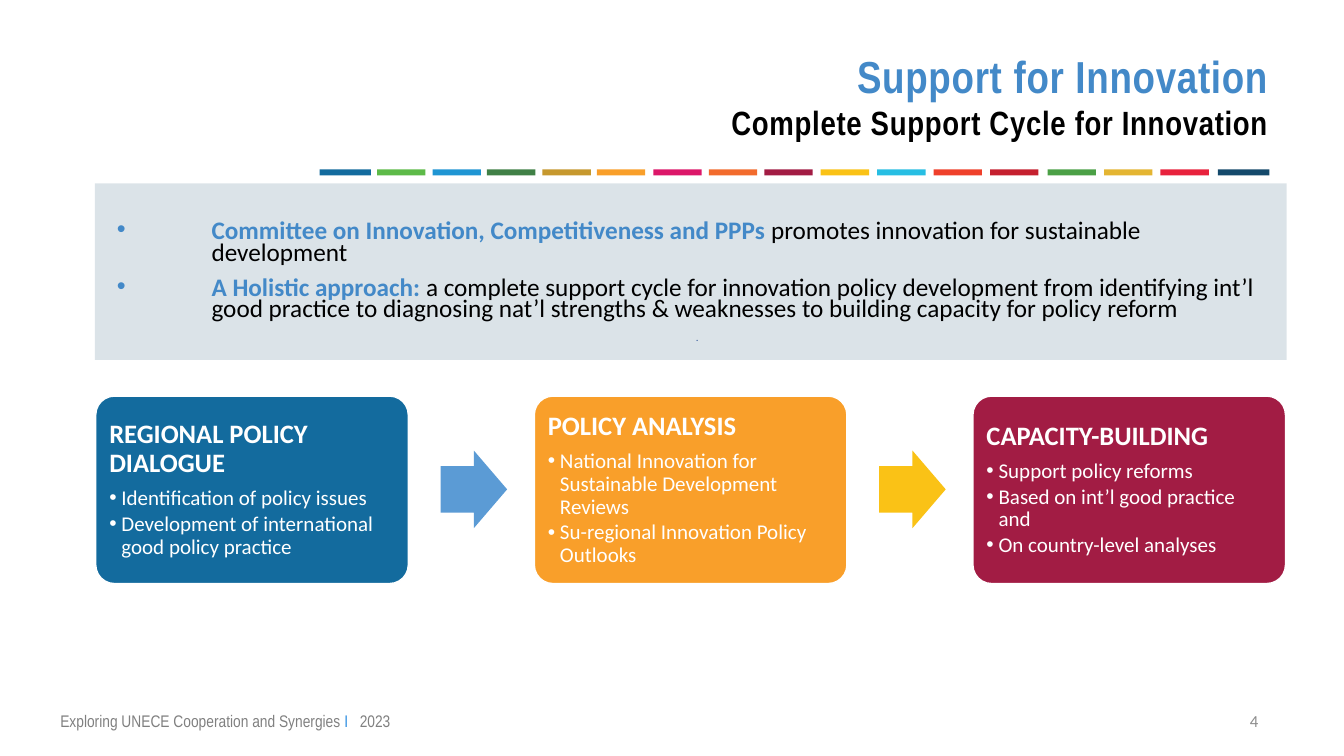
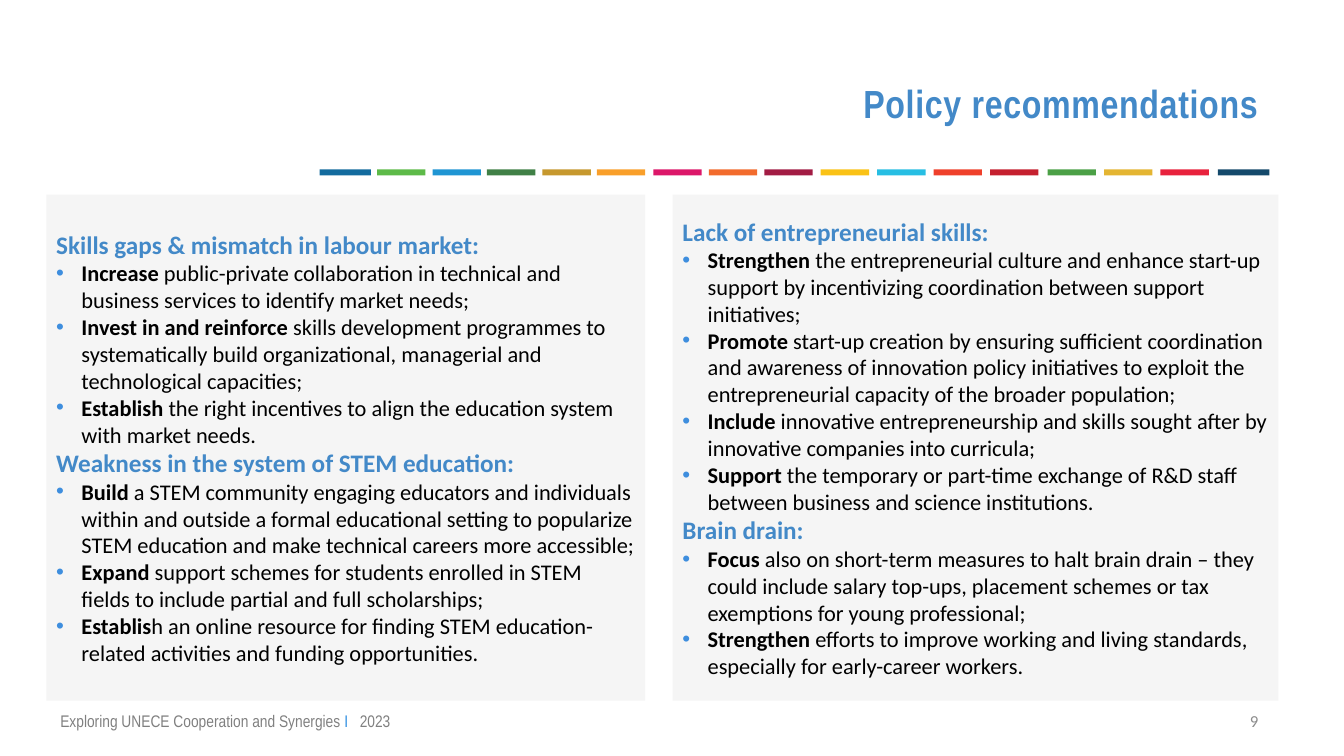
from lxml import etree
from pptx import Presentation
from pptx.dml.color import RGBColor
from pptx.enum.shapes import MSO_SHAPE
from pptx.enum.text import MSO_ANCHOR, PP_ALIGN
from pptx.oxml.ns import qn
from pptx.util import Inches, Pt

RECT = MSO_SHAPE.RECTANGLE
ROUND = MSO_SHAPE.ROUNDED_RECTANGLE
ARROW = MSO_SHAPE.RIGHT_ARROW
TOP, MIDDLE = MSO_ANCHOR.TOP, MSO_ANCHOR.MIDDLE
LEFT, CENTER, RIGHT = PP_ALIGN.LEFT, PP_ALIGN.CENTER, PP_ALIGN.RIGHT

BODY, HEAD = "Calibri", "Arial Narrow"
BLUE, BLACK, WHITE, GREY = "4389C8", "000000", "FFFFFF", "808080"
NAVY, OCEAN, AMBER, WINE, GOLD = "14496B", "136B9E", "F99F2A", "A21C44", "FAC216"

DASHES = [
    (3.17, OCEAN), (3.74, "5DBA48"), (4.29, "1F95D3"), (4.83, "408046"),
    (5.38, "C6982E"), (5.92, AMBER), (6.48, "DC1769"), (7.03, "F26B2D"),
    (7.58, WINE), (8.14, GOLD), (8.7, "27BEE3"), (9.26, "EF402B"),
    (9.82, "C5202F"), (10.39, "4BA046"), (10.95, "E4B532"),
    (11.51, "E8223D"), (12.08, NAVY),
]

CARDS = [
    (OCEAN, "REGIONAL POLICY DIALOGUE",
     ["Identification of policy issues",
      "Development of international good policy practice"]),
    (AMBER, "POLICY ANALYSIS",
     ["National Innovation for Sustainable Development Reviews",
      "Su-regional Innovation Policy Outlooks"]),
    (WINE, "CAPACITY-BUILDING",
     ["Support policy reforms",
      "Based on int’l good practice and",
      "On country-level analyses"]),
]

AIMS = [
    ("Committee on Innovation, Competitiveness and PPPs ",
     "promotes innovation for sustainable development"),
    ("A Holistic approach: ",
     "a complete support cycle for innovation policy development from identifying "
     "int’l good practice to diagnosing nat’l strengths & weaknesses to building "
     "capacity for policy reform"),
]

SKILLS = [
    ("Skills gaps & mismatch in labour market:", [
        ("Increase ", "public-private collaboration in technical and business "
         "services to identify market needs;"),
        ("Invest in and reinforce ", "skills development programmes to "
         "systematically build organizational, managerial and technological "
         "capacities;"),
        ("Establish", " the right incentives to align the education system with "
         "market needs."),
    ]),
    ("Weakness in the system of STEM education:", [
        ("Build", " a STEM community engaging educators and individuals within and "
         "outside a formal educational setting to popularize STEM education and "
         "make technical careers more accessible;"),
        ("Expand", " support schemes for students enrolled in STEM fields to "
         "include partial and full scholarships;"),
        ("Establis", "h an online resource for finding STEM education-related "
         "activities and funding opportunities."),
    ]),
]

TALENT = [
    ("Lack of entrepreneurial skills:", [
        ("Strengthen", " the entrepreneurial culture and enhance start-up support "
         "by incentivizing coordination between support initiatives;"),
        ("Promote", " start-up creation by ensuring sufficient coordination and "
         "awareness of innovation policy initiatives to exploit the "
         "entrepreneurial capacity of the broader population;"),
        ("Include", " innovative entrepreneurship and skills sought after by "
         "innovative companies into curricula;"),
        ("Support", " the temporary or part-time exchange of R&D staff between "
         "business and science institutions."),
    ]),
    ("Brain drain:", [
        ("Focus", " also on short-term measures to halt brain drain – they could "
         "include salary top-ups, placement schemes or tax exemptions for young "
         "professional;"),
        ("Strengthen", " efforts to improve working and living standards, "
         "especially for early-career workers."),
    ]),
]


def color(code):
    return RGBColor.from_string(code)


def node(parent, tag, **attrs):
    """Append a DrawingML child element."""
    return etree.SubElement(parent, qn("a:" + tag), attrs)


class Deck:
    def __init__(self):
        self.file = Presentation()
        self.file.slide_width = Inches(13.33)
        self.file.slide_height = Inches(7.5)
        self.slide = None

    def page(self, number):
        """Start a slide with the shared footer, number and colour band."""
        self.slide = self.file.slides.add_slide(self.file.slide_layouts[6])
        foot = self.text(0.5, 7, 10.44, 0.3)
        self.para(foot, [("Exploring UNECE Cooperation and Synergies ", {}),
                         ("I\t", {"ink": "3290E2"}), ("2023", {})],
                  12, GREY, font=HEAD, tab=2.97)
        mark = self.text(11.63, 6.95, 0.95, 0.4, MIDDLE)
        self.para(mark, number, 12, "8C8C8C", align=RIGHT)
        for left, fill in DASHES:
            wide = 0.51 if fill in (OCEAN, NAVY) else 0.48
            self.shape(RECT, left, 1.68, wide, 0.06, fill)

    def text(self, left, top, wide, high, anchor=TOP):
        box = self.slide.shapes.add_textbox(
            Inches(left), Inches(top), Inches(wide), Inches(high))
        frame = box.text_frame
        frame.word_wrap = True
        frame.vertical_anchor = anchor
        return frame

    def shape(self, kind, left, top, wide, high, fill, alpha=None, line=None):
        item = self.slide.shapes.add_shape(
            kind, Inches(left), Inches(top), Inches(wide), Inches(high))
        item.shadow.inherit = False
        item.fill.solid()
        item.fill.fore_color.rgb = color(fill)
        if alpha:
            tint = item._element.spPr.find(".//" + qn("a:srgbClr"))
            node(tint, "alpha", val=str(alpha * 1000))
        if line:
            item.line.color.rgb = color(line)
            item.line.width = Pt(1)
        else:
            item.line.fill.background()
        item.text_frame.vertical_anchor = MIDDLE
        return item

    def para(self, frame, runs, size, ink, bold=False, font=BODY, align=LEFT,
             indent=0, hang=0, dot=None, tab=None, before=0, after=0, lines=None):
        """Add a paragraph; runs is a string or a list of (text, style)."""
        first = not frame.paragraphs[0].runs
        para = frame.paragraphs[0] if first else frame.add_paragraph()
        props = para._p.get_or_add_pPr()
        if indent:
            props.set("marL", str(Inches(indent)))
            props.set("indent", str(-Inches(hang)))
        if dot:
            node(node(props, "buClr"), "srgbClr", val=dot)
            node(props, "buFont", typeface="Arial")
            node(props, "buChar", char="•")
        if tab:
            node(node(props, "tabLst"), "tab", pos=str(Inches(tab)), algn="l")
        para.alignment = align
        para.space_before = Pt(0 if first else before)
        para.space_after = Pt(after)
        if lines:
            para.line_spacing = lines
        para.font.name, para.font.size = font, Pt(size)
        para.font.bold = bold
        para.font.color.rgb = color(ink)
        for words, style in [(runs, {})] if isinstance(runs, str) else runs:
            run = para.add_run()
            run.text = words
            if "bold" in style:
                run.font.bold = style["bold"]
            if "ink" in style:
                run.font.color.rgb = color(style["ink"])
        return para

    def title(self, left, top, wide, high, *rows):
        frame = self.text(left, top, wide, high, MIDDLE)
        for words, size, ink in rows:
            para = self.para(frame, words, size, ink, True, HEAD, RIGHT)
            for run in para.runs:
                run._r.get_or_add_rPr().set("spc", "50")

    def card(self, left, fill, head, items):
        item = self.shape(ROUND, left, 3.93, 3.1, 1.86, fill, line=WHITE)
        item.adjustments[0] = 0.1
        frame = item.text_frame
        frame.margin_left = frame.margin_right = Inches(0.08)
        frame.margin_top = frame.margin_bottom = Inches(0.08)
        self.para(frame, head, 19, WHITE, True, after=6.65, lines=0.9)
        for words in items:
            self.para(frame, words, 15, WHITE, indent=0.12, hang=0.12,
                      dot=WHITE, after=2.25, lines=0.9)

    def arrow(self, left, fill):
        item = self.shape(ARROW, left, 4.47, 0.66, 0.77, fill)
        item.adjustments[0] = 0.6

    def aims(self, items):
        frame = self.shape(RECT, 0.94, 1.82, 11.82, 1.75, NAVY, 15).text_frame
        frame.margin_top = Inches(0.27)
        for lead, rest in items:
            self.para(frame, [(lead, {"bold": True, "ink": BLUE}), (rest, {})],
                      18, BLACK, indent=1.06, hang=0.94, dot=BLUE,
                      before=10, lines=0.7)
        self.para(frame, ".", 6, "2F5597", True, align=CENTER, indent=0.13,
                  before=10, lines=0.7)

    def panel(self, left, wide, groups):
        frame = self.shape(RECT, left, 1.93, wide, 5.02, "BFBFBF", 15).text_frame
        for head, items in groups:
            self.para(frame, head, 18, BLUE, True)
            for lead, rest in items:
                self.para(frame, [(lead, {"bold": True}), (rest, {})], 16, BLACK,
                          indent=0.25, hang=0.25, dot="3E8EDE")


def main():
    deck = Deck()

    deck.page("4")
    deck.title(2.02, 0.4, 10.66, 1.09,
               ("Support for Innovation", 32, BLUE),
               ("Complete Support Cycle for Innovation", 24, BLACK))
    deck.aims(AIMS)
    step = 4.35
    for spot, card in enumerate(CARDS):
        deck.card(0.95 + spot * step, *card)
    for spot, fill in enumerate(("5B9BD5", GOLD)):
        deck.arrow(4.37 + spot * step, fill)

    deck.page("9")
    deck.title(2.48, 0.74, 10.1, 0.57, ("Policy recommendations", 28, BLUE))
    deck.panel(0.46, 5.94, SKILLS)
    deck.panel(6.67, 6.01, TALENT)

    deck.file.save("out.pptx")


if __name__ == "__main__":
    main()
